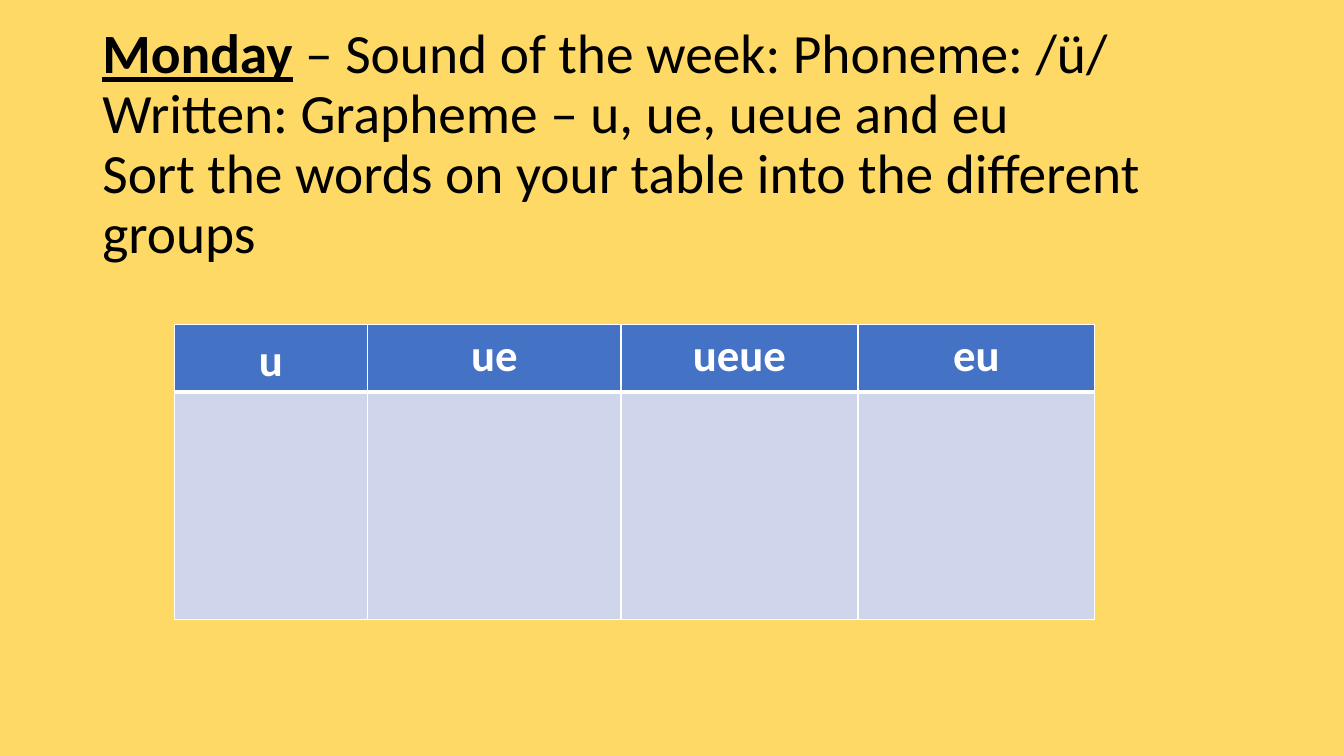
from lxml.etree import SubElement
from pptx import Presentation
from pptx.dml.color import RGBColor
from pptx.enum.text import MSO_ANCHOR, PP_ALIGN
from pptx.oxml.ns import qn
from pptx.util import Cm, Pt

COLORS = {
    "background": "FFD966",
    "text": "000000",
    "header": "4472C4",
    "body": "CFD5EA",
    "white": "FFFFFF",
}
GRAPHEMES = ["u", "ue", "ueue", "eu"]
COLUMN_WIDTHS = [4.88, 6.38, 5.97, 5.97]
ROW_HEIGHTS = [1.7, 5.72]


def color(name):
    return RGBColor.from_string(COLORS[name])


def add_text(paragraph, text, size, color_name, bold=False, underline=False):
    run = paragraph.add_run()
    run.text = text
    run.font.name = "Calibri"
    run.font.size = Pt(size)
    run.font.bold = bold
    run.font.underline = underline
    run.font.color.rgb = color(color_name)


def set_borders(cell, **widths):
    """Draw white borders with widths in points, keyed by line tag."""
    properties = cell._tc.get_or_add_tcPr()
    for tag, width in widths.items():
        line = SubElement(properties, qn(f"a:{tag}"), w=str(Pt(width)))
        fill = SubElement(line, qn("a:solidFill"))
        SubElement(fill, qn("a:srgbClr"), val=COLORS["white"])


def add_instructions(slide, left, top, width, height):
    shape = slide.shapes.add_textbox(Cm(left), Cm(top), Cm(width), Cm(height))
    frame = shape.text_frame
    frame.word_wrap = True
    frame.vertical_anchor = MSO_ANCHOR.MIDDLE
    paragraph = frame.paragraphs[0]
    paragraph.line_spacing = 0.9
    add_text(paragraph, "Monday", 39.6, "text", bold=True, underline=True)
    lines = [
        " – Sound of the week: Phoneme: /ü/",
        "Written: Grapheme – u, ue, ueue and eu ",
        "Sort the words on your table into the different groups",
    ]
    for index, line in enumerate(lines):
        if index:
            paragraph.add_line_break()
        add_text(paragraph, line, 39.6, "text")


def add_sorting_table(slide, left, top):
    shape = slide.shapes.add_table(
        len(ROW_HEIGHTS), len(GRAPHEMES), Cm(left), Cm(top),
        Cm(sum(COLUMN_WIDTHS)), Cm(sum(ROW_HEIGHTS)))
    table = shape.table
    for column, width in zip(table.columns, COLUMN_WIDTHS):
        column.width = Cm(width)
    for row, height in zip(table.rows, ROW_HEIGHTS):
        row.height = Cm(height)

    for index, grapheme in enumerate(GRAPHEMES):
        # Header cell
        header = table.cell(0, index)
        set_borders(header, lnL=1, lnR=1, lnT=1, lnB=3)
        header.fill.solid()
        header.fill.fore_color.rgb = color("header")
        if index:
            header.margin_left = header.margin_right = Cm(0)
            header.margin_top = header.margin_bottom = Cm(0)
        paragraph = header.text_frame.paragraphs[0]
        paragraph.alignment = PP_ALIGN.CENTER
        paragraph.line_spacing = 1.07
        paragraph.space_after = Pt(8)
        add_text(paragraph, grapheme, 32, "white", bold=True)

        # Empty cell for the sorted words
        body = table.cell(1, index)
        set_borders(body, lnL=1, lnR=1, lnT=3, lnB=1)
        body.fill.solid()
        body.fill.fore_color.rgb = color("body")


def main():
    presentation = Presentation()
    presentation.slide_width = Cm(33.87)
    presentation.slide_height = Cm(19.05)
    slide = presentation.slides.add_slide(presentation.slide_layouts[6])
    slide.background.fill.solid()
    slide.background.fill.fore_color.rgb = color("background")
    add_instructions(slide, 2.33, 1.83, 29.21, 3.68)
    add_sorting_table(slide, 4.39, 8.18)
    presentation.save("out.pptx")


if __name__ == "__main__":
    main()
